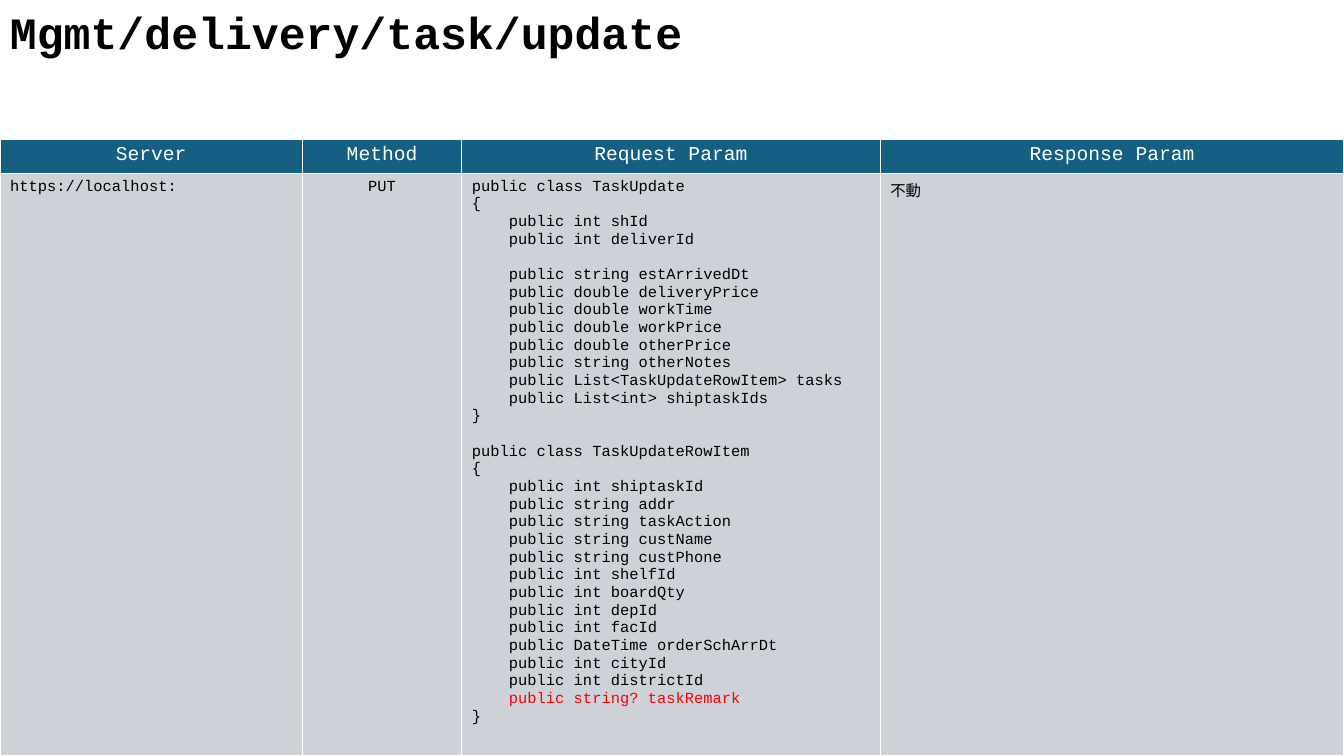
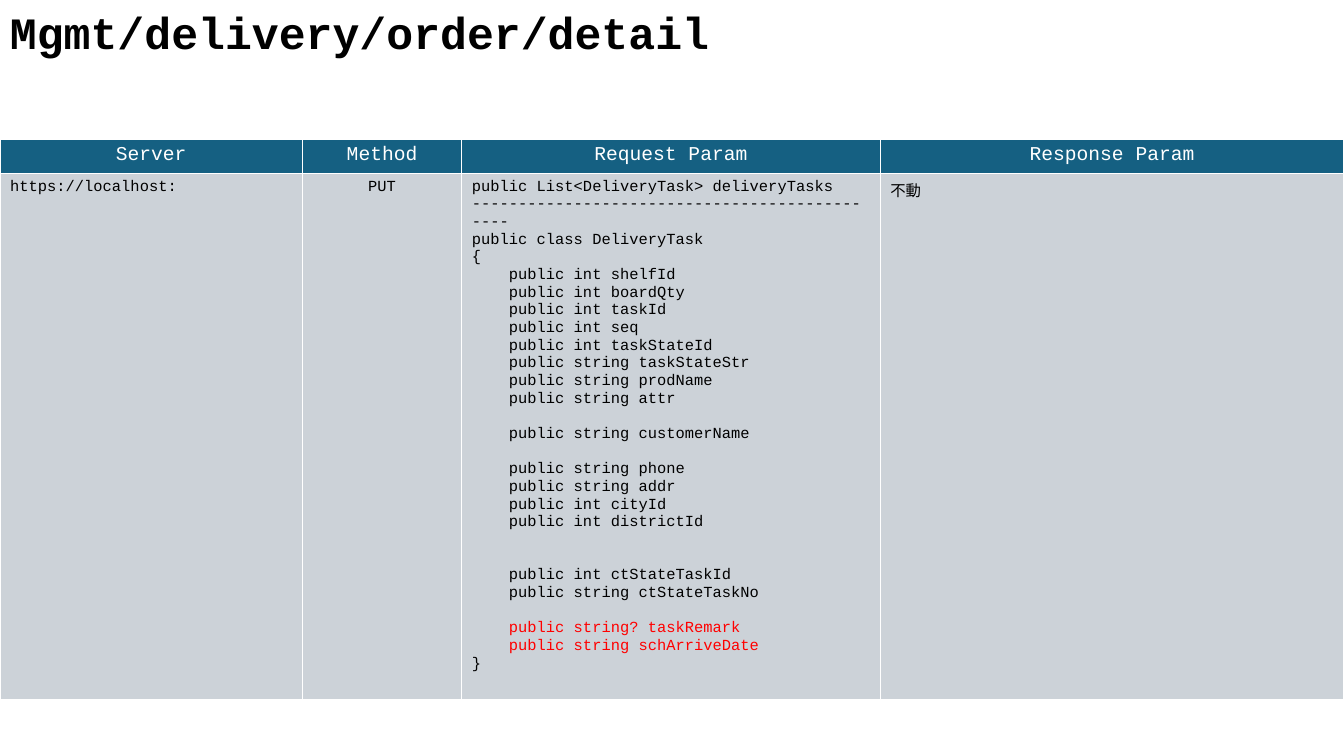
from dataclasses import dataclass

from lxml import etree
from pptx import Presentation
from pptx.dml.color import RGBColor
from pptx.enum.text import MSO_AUTO_SIZE, PP_ALIGN
from pptx.oxml.ns import qn
from pptx.util import Inches, Pt

LEFT, CENTER = PP_ALIGN.LEFT, PP_ALIGN.CENTER
FIT_SHAPE = MSO_AUTO_SIZE.SHAPE_TO_FIT_TEXT


@dataclass(frozen=True)
class Theme:
    font: str = "Courier New"
    ink: str = "000000"
    changed: str = "FF0000"
    white: str = "FFFFFF"
    header_fill: str = "156082"
    body_fill: str = "CCD2D8"
    title_size: float = 32
    header_size: float = 14
    body_size: float = 11
    code_line: float = 12.6
    border: float = 1


THEME = Theme()

HEADINGS = ("Server", "Method", "Request Param", "Response Param")
COLUMN_WIDTHS = (3, 1.58, 4.15, 4.6)
BODY_ALIGNMENTS = (LEFT, CENTER, LEFT, LEFT)
TABLE_TOP = 1.38
HEADER_HEIGHT = 0.34

TASK_UPDATE = """public class TaskUpdate
{
    public int shId
    public int deliverId

    public string estArrivedDt
    public double deliveryPrice
    public double workTime
    public double workPrice
    public double otherPrice
    public string otherNotes
    public List<TaskUpdateRowItem> tasks
    public List<int> shiptaskIds
}

public class TaskUpdateRowItem
{
    public int shiptaskId
    public string addr
    public string taskAction
    public string custName
    public string custPhone
    public int shelfId
    public int boardQty
    public int depId
    public int facId
    public DateTime orderSchArrDt
    public int cityId
    public int districtId
    public string? taskRemark
}"""

ORDER_DETAIL = """public List<DeliveryTask> deliveryTasks
----------------------------------------------
public class DeliveryTask
{
    public int shelfId
    public int boardQty
    public int taskId
    public int seq
    public int taskStateId
    public string taskStateStr
    public string prodName
    public string attr

    public string customerName

    public string phone
    public string addr
    public int cityId
    public int districtId


    public int ctStateTaskId
    public string ctStateTaskNo

    public string? taskRemark
    public string schArriveDate
}"""

# Title, request code, fields marked as changed, body row height
ENDPOINTS = (
    ("Mgmt/delivery/task/update", TASK_UPDATE, ("taskRemark",), 5.78),
    ("Mgmt/delivery/order/detail", ORDER_DETAIL,
     ("taskRemark", "schArriveDate"), 5.22),
)


def style_text(paragraph, size, color, bold=False, align=LEFT):
    paragraph.alignment = align
    for run in paragraph.runs:
        run.font.name = THEME.font
        run.font.size = Pt(size)
        run.font.bold = bold
        run.font.color.rgb = RGBColor.from_string(color)


def style_cell(cell, fill):
    """Draw the cell's white borders, then its fill."""
    properties = cell._tc.get_or_add_tcPr()
    for side in ("a:lnL", "a:lnR", "a:lnT", "a:lnB"):
        line = etree.SubElement(properties, qn(side), w=str(Pt(THEME.border)))
        line_fill = etree.SubElement(line, qn("a:solidFill"))
        etree.SubElement(line_fill, qn("a:srgbClr"), val=THEME.white)
    cell.fill.solid()
    cell.fill.fore_color.rgb = RGBColor.from_string(fill)


def add_title(slide, title):
    box = slide.shapes.add_textbox(0, 0, Inches(9.45), Inches(0.64))
    frame = box.text_frame
    frame.word_wrap = True
    frame.auto_size = FIT_SHAPE
    frame.text = title
    style_text(frame.paragraphs[0], THEME.title_size, THEME.ink, bold=True)


def write_code(frame, code, changed_fields):
    """One paragraph per code line; empty lines become space before."""
    gap = 0
    paragraph = None
    for line in code.splitlines():
        if not line:
            gap += 1
            continue
        paragraph = frame.add_paragraph() if paragraph else frame.paragraphs[0]
        paragraph.text = line
        changed = line.split()[-1] in changed_fields
        style_text(paragraph, THEME.body_size,
                   THEME.changed if changed else THEME.ink)
        if gap:
            paragraph.space_before = Pt(gap * THEME.code_line)
            gap = 0


def add_endpoint_table(slide, code, changed_fields, body_height):
    table = slide.shapes.add_table(
        2, len(HEADINGS), 0, Inches(TABLE_TOP), Inches(sum(COLUMN_WIDTHS)),
        Inches(HEADER_HEIGHT + body_height)).table
    table.horz_banding = False
    table.rows[0].height = Inches(HEADER_HEIGHT)
    table.rows[1].height = Inches(body_height)

    body = ("https://localhost:", "PUT", code, "不動")
    columns = zip(COLUMN_WIDTHS, HEADINGS, body, BODY_ALIGNMENTS)
    for index, (width, heading, content, align) in enumerate(columns):
        table.columns[index].width = Inches(width)

        # Header cell
        header_cell = table.cell(0, index)
        style_cell(header_cell, THEME.header_fill)
        header_cell.text_frame.text = heading
        style_text(header_cell.text_frame.paragraphs[0], THEME.header_size,
                   THEME.white, align=CENTER)

        # Body cell
        body_cell = table.cell(1, index)
        style_cell(body_cell, THEME.body_fill)
        if content is code:
            write_code(body_cell.text_frame, code, changed_fields)
        else:
            body_cell.text_frame.text = content
            style_text(body_cell.text_frame.paragraphs[0], THEME.body_size,
                       THEME.ink, align=align)


def main():
    deck = Presentation()
    deck.slide_width = Inches(13.33)
    deck.slide_height = Inches(7.5)
    blank = deck.slide_layouts[6]
    for title, code, changed_fields, body_height in ENDPOINTS:
        slide = deck.slides.add_slide(blank)
        add_title(slide, title)
        add_endpoint_table(slide, code, changed_fields, body_height)
    deck.save("out.pptx")


if __name__ == "__main__":
    main()
